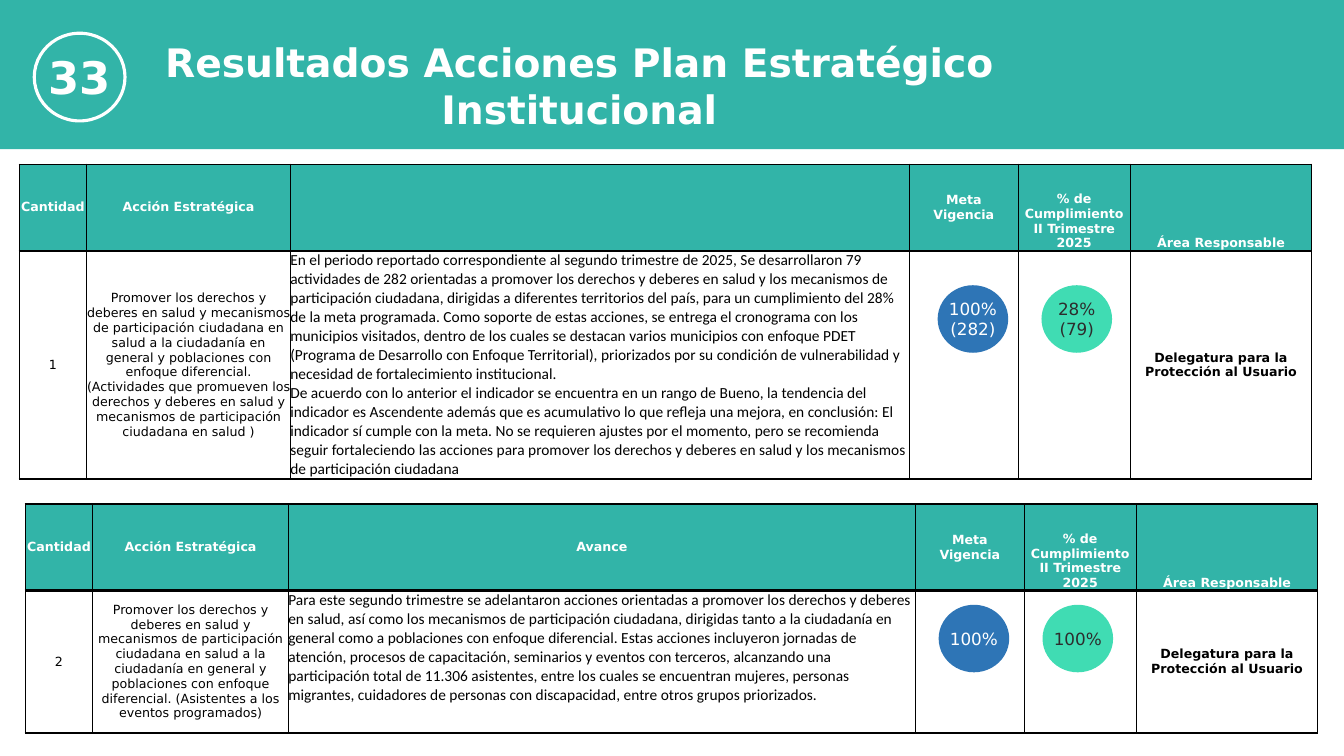
from lxml.etree import SubElement
from pptx import Presentation
from pptx.dml.color import RGBColor
from pptx.enum.shapes import MSO_SHAPE
from pptx.enum.text import MSO_ANCHOR, MSO_AUTO_SIZE, PP_ALIGN
from pptx.oxml import parse_xml
from pptx.oxml.ns import nsdecls
from pptx.util import Inches, Pt

TEAL, WHITE, BLACK = "32B4A8", "FFFFFF", "000000"
SANS, BODY = "DejaVu Sans", "Calibri"
MID, LOW, TOP = MSO_ANCHOR.MIDDLE, MSO_ANCHOR.BOTTOM, MSO_ANCHOR.TOP


def paint(part, color):
    part.solid()
    part.fore_color.rgb = RGBColor.from_string(color)


def write(frame, text, size, color, bold=False, face=SANS, align=PP_ALIGN.CENTER):
    frame.text = text
    frame.margin_left = frame.margin_right = 0
    frame.margin_top = frame.margin_bottom = 0
    for par in frame.paragraphs:
        par.alignment = align
        font = par.font
        font.name, font.size, font.bold = face, Pt(size), bold
        paint(font.fill, color)


deck = Presentation()
deck.slide_width, deck.slide_height = Inches(13.33), Inches(7.5)
slide = deck.slides.add_slide(deck.slide_layouts[5])
shapes = slide.shapes

# Header band, placed behind the title
band = shapes.add_shape(MSO_SHAPE.RECTANGLE, 0, 0, deck.slide_width, Inches(1.48))
band.shadow.inherit = False
paint(band.fill, TEAL)
band.line.fill.background()
title = shapes.title
title._element.addprevious(band._element)

# Title
title.left, title.top = Inches(1.24), Inches(0.38)
title.width, title.height = Inches(9.01), Inches(0.99)
frame = title.text_frame
write(frame, "Resultados Acciones Plan Estratégico Institucional", 28, WHITE, True)
frame.word_wrap, frame.auto_size = True, MSO_AUTO_SIZE.NONE
frame.vertical_anchor = TOP

# Slide number in a ring
ring = shapes.add_shape(MSO_SHAPE.OVAL, Inches(0.34), Inches(0.33), Inches(0.9), Inches(0.87))
ring.shadow.inherit = False
ring.fill.background()
paint(ring.line.fill, WHITE)
ring.line.width = Pt(2.25)
write(ring.text_frame, "33", 32, WHITE, True)
ring.text_frame.word_wrap = False
ring.text_frame.vertical_anchor = MID

# One table and a pair of dots for each action
heads = ["Cantidad", "Acción Estratégica", "Avance", "Meta\vVigencia",
         "% de Cumplimiento II Trimestre 2025", "Área Responsable"]
owner = "Delegatura para la Protección al Usuario"
aim = ("Promover los derechos y deberes en salud y mecanismos de participación ciudadana "
       "en salud a la ciudadanía en general y poblaciones con enfoque diferencial. ")
report = (
    "En el periodo reportado correspondiente al segundo trimestre de 2025, Se desarrollaron 79 "
    "actividades de 282 orientadas a promover los derechos y deberes en salud y los mecanismos de "
    "participación ciudadana, dirigidas a diferentes territorios del país, para un cumplimiento del "
    "28% de la meta programada. Como soporte de estas acciones, se entrega el cronograma con los "
    "municipios visitados, dentro de los cuales se destacan varios municipios con enfoque PDET "
    "(Programa de Desarrollo con Enfoque Territorial), priorizados por su condición de "
    "vulnerabilidad y necesidad de fortalecimiento institucional.")
verdict = (
    "De acuerdo con lo anterior el indicador se encuentra en un rango de Bueno, la tendencia del "
    "indicador es Ascendente además que es acumulativo lo que refleja una mejora, en conclusión: El "
    "indicador sí cumple con la meta. No se requieren ajustes por el momento, pero se recomienda "
    "seguir fortaleciendo las acciones para promover los derechos y deberes en salud y los "
    "mecanismos de participación ciudadana")
second = (
    "Para este segundo trimestre se adelantaron acciones orientadas a promover los derechos y "
    "deberes en salud, así como los mecanismos de participación ciudadana, dirigidas tanto a la "
    "ciudadanía en general como a poblaciones con enfoque diferencial. Estas acciones incluyeron "
    "jornadas de atención, procesos de capacitación, seminarios y eventos con terceros, alcanzando "
    "una participación total de 11.306 asistentes, entre los cuales se encuentran mujeres, personas "
    "migrantes, cuidadores de personas con discapacidad, entre otros grupos priorizados.")
acts = [
    # left, top, body height, action width, heads, body, dot left, dot top, dot labels
    (0.19, 1.63, 2.26, 2.02, heads[:2] + [""] + heads[3:],
     ["1", aim + "(Actividades que promueven los derechos y deberes en salud y mecanismos de "
      "participación ciudadana en salud )", report + "\v" + verdict, "", "", owner],
     9.3, 2.83, ["100%\n(282)", "28%\n(79)"]),
    (0.25, 5, 1.41, 1.94, heads,
     ["2", aim + "(Asistentes a los eventos programados)", second, "", "", owner],
     9.31, 6, ["100%", "100%"]),
]
for left, top, tall, wide, head, body, dotx, doty, marks in acts:
    cols = [0.67, wide, 8.16 - wide, 1.08, 1.11, 1.8]
    grid = shapes.add_table(2, 6, Inches(left), Inches(top),
                            Inches(sum(cols)), Inches(0.86 + tall)).table
    grid.rows[0].height, grid.rows[1].height = Inches(0.86), Inches(tall)
    for c, width in enumerate(cols):
        grid.columns[c].width = Inches(width)
        for r, text in enumerate((head[c], body[c])):
            cell = grid.cell(r, c)
            if r == 0:
                write(cell.text_frame, text, 9, WHITE, True)
                cell.vertical_anchor = LOW if c > 3 else MID
            elif c == 2:
                write(cell.text_frame, text, 11, BLACK, False, BODY, PP_ALIGN.LEFT)
                cell.vertical_anchor = TOP
            else:
                write(cell.text_frame, text, 9, BLACK, c == 5)
                cell.vertical_anchor = MID
            cell.margin_left = cell.margin_right = 0
            cell.margin_top = cell.margin_bottom = 0
            paint(cell.fill, WHITE if r else TEAL)
            # Borders come before the fill, heavier below
            props = cell._tc.get_or_add_tcPr()
            for i, side in enumerate("LRTB"):
                edge = parse_xml(f'<a:ln{side} {nsdecls("a")} w="{Pt(2 if side == "B" else 1)}"/>')
                tone = SubElement(edge, edge.tag.split("}")[0] + "}solidFill")
                SubElement(tone, tone.tag.replace("solidFill", "srgbClr"), val=BLACK)
                props.insert(i, edge)

    # Goal and result dots
    for i, (mark, fill, ink) in enumerate(zip(marks, ("2E75B6", "40DCB3"), (WHITE, "2D2D2D"))):
        dot = shapes.add_shape(MSO_SHAPE.OVAL, Inches(dotx + 1.03 * i), Inches(doty),
                               Inches(0.7), Inches(0.67))
        dot.shadow.inherit = False
        paint(dot.fill, fill)
        dot.line.fill.background()
        write(dot.text_frame, mark, 12, ink)
        dot.text_frame.word_wrap = False
        dot.text_frame.vertical_anchor = MID

deck.save("out.pptx")
